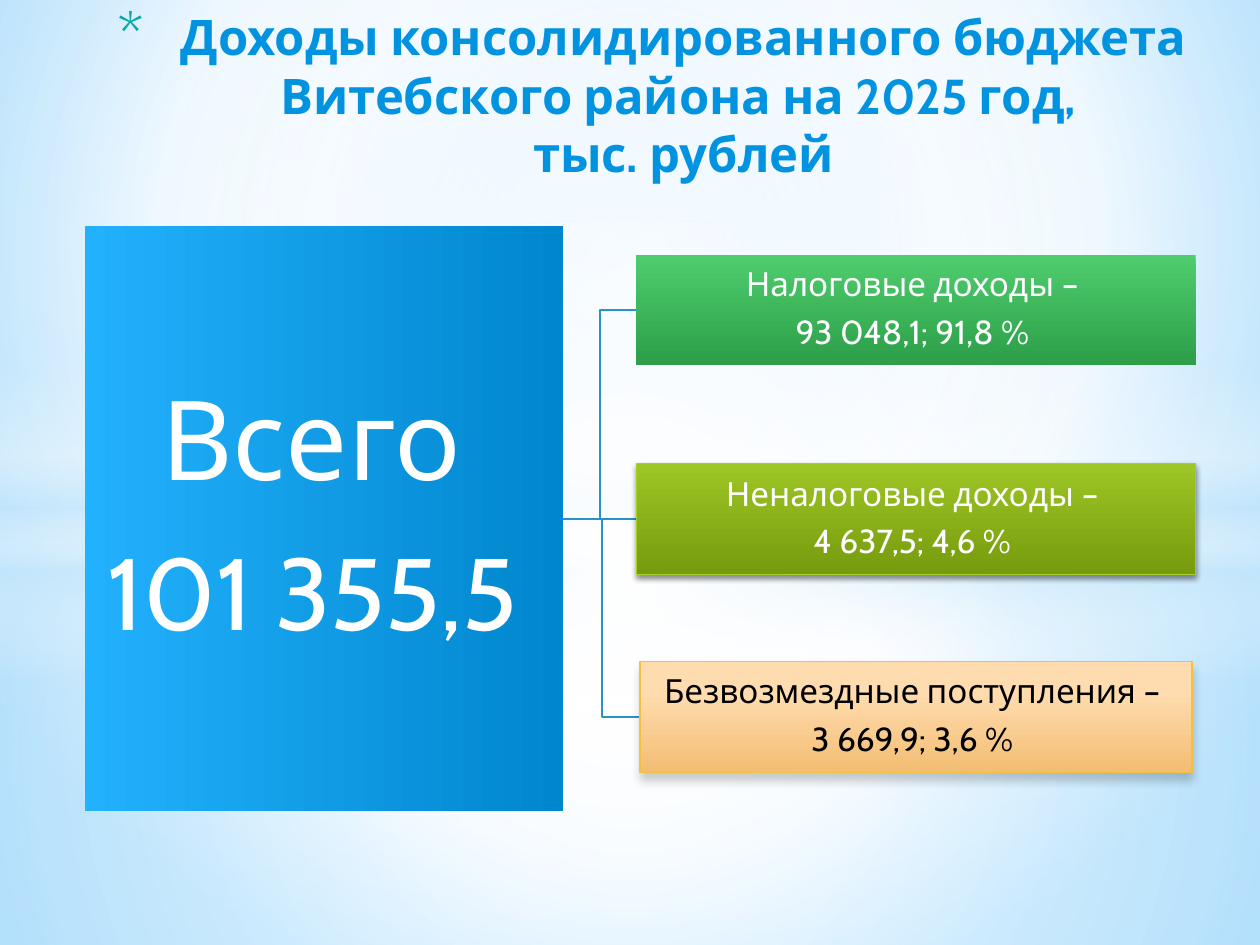
"""Build the slide on the consolidated budget revenues of the district."""
from dataclasses import dataclass
from typing import Any, Optional

from lxml.etree import SubElement
from pptx import Presentation
from pptx.dml.color import RGBColor
from pptx.enum.shapes import MSO_CONNECTOR as Connector, MSO_SHAPE as Preset
from pptx.enum.text import MSO_ANCHOR as Anchor, MSO_AUTO_SIZE as AutoSize, PP_ALIGN as Align
from pptx.oxml.ns import qn
from pptx.util import Inches, Pt

FONT = "Cabin"
LINE_COLOR = "2792CB"
TRUNK_X, TRUNK_Y = 4.47, 4.12
CIRCLE_CENTER = (50, 50, 50, 50)


@dataclass
class Gradient:
    stops: list[tuple]
    angle: int = 90
    focus: Optional[tuple[int, int, int, int]] = None


@dataclass
class Shadow:
    alpha: int
    blur: float
    distance: float


@dataclass
class Backdrop:
    box: tuple[float, float, float, float]
    gradient: Gradient
    preset: Any = Preset.RECTANGLE


@dataclass
class Card:
    box: tuple[float, float, float, float]
    lines: list[str]
    sizes: list[int]
    gradient: Gradient
    text_color: str = "FFFFFF"
    line_color: Optional[str] = None
    shadow: Optional[Shadow] = None
    inset: float = 0.01
    rotation: int = 0


BACKGROUND = Gradient([(0, "B0E0FF"), (60, "FFFFFF"), (100, "6BC5FF")], focus=(20, 10, 20, 60))
BACKDROPS = [
    Backdrop((0, 4.23, 10, 3.27), Gradient(
        [(0, "FFFFFF", 91), (37, "FFFFFF", 76), (100, "C6E7FC", 79)], focus=CIRCLE_CENTER)),
    Backdrop((0, 0, 10, 4.23), Gradient(
        [(0, "FFFFFF", 89), (48, "FFFFFF", 62), (100, "C6E7FC", 79)], focus=CIRCLE_CENTER)),
    Backdrop((0, 2.9, 10, 2.5), Gradient(
        [(0, "FFFFFF", 0), (29, "FFFFFF", 30), (45, "C6E7FC", 40),
         (55, "FFFFFF", 26), (65, "C6E7FC", 60), (100, "FFFFFF", 0)])),
    Backdrop((0, 1.75, 10, 5.58), Gradient(
        [(0, "FFFFFF"), (54, "FFFFFF", 0)], focus=CIRCLE_CENTER), Preset.OVAL),
]
TOTAL = Card((0.25, 2.22, 4.64, 3.79), ["Всего ", "101 355,5 "], [63, 58],
             Gradient([(0, "22B1FD"), (100, "0086CD")]), inset=0.04, rotation=270)
SOURCES = [
    Card((5.05, 2.02, 4.44, 0.88), ["Налоговые доходы – ", "93 048,1; 91,8 % "], [19, 19],
         Gradient([(0, "4FCD6E"), (100, "2C9F48")])),
    Card((5.05, 3.68, 4.44, 0.88), ["Неналоговые доходы – ", "4 637,5; 4,6 % "], [19, 19],
         Gradient([(0, "9DC626"), (100, "779B0D")]),
         line_color="A5D028", shadow=Shadow(45, 3.1, 1.8)),
    Card((5.08, 5.25, 4.38, 0.88), ["Безвозмездные поступления – ", "3 669,9; 3,6 % "], [19, 19],
         Gradient([(28, "FFDCAF"), (100, "F3BD72")]), text_color="000000",
         line_color="F5C040", shadow=Shadow(20, 5, 4)),
]


def rgb(value: str) -> RGBColor:
    """Turn a hex string into a colour."""
    return RGBColor.from_string(value)


def apply(target: Any, formats: dict[str, Any]) -> None:
    """Set every listed attribute on the target."""
    for name, value in formats.items():
        setattr(target, name, value)


def add_node(parent: Any, tag: str, **attributes: Any) -> Any:
    """Append a drawing element with the given attributes."""
    return SubElement(parent, qn(f"a:{tag}"), {name: str(value) for name, value in attributes.items()})


def add_color(parent: Any, color: str, alpha: int = 100) -> None:
    """Append a colour with its opacity in percent."""
    node = add_node(parent, "srgbClr", val=color)
    if alpha < 100:
        add_node(node, "alpha", val=alpha * 1000)


def paint_gradient(fill: Any, element: Any, gradient: Gradient) -> None:
    """Fill an element with a linear or circular gradient."""
    fill.gradient()
    node = element.find(f".//{qn('a:gradFill')}")
    for child in list(node):
        node.remove(child)
    stop_list = add_node(node, "gsLst")
    for position, *color in gradient.stops:
        add_color(add_node(stop_list, "gs", pos=position * 1000), *color)
    if gradient.focus:
        sides = {side: value * 1000 for side, value in zip("ltrb", gradient.focus)}
        add_node(add_node(node, "path", path="circle"), "fillToRect", **sides)
    else:
        add_node(node, "lin", ang=gradient.angle * 60000, scaled=0)


def add_panel(slide: Any, preset: Any, box: tuple, gradient: Gradient) -> Any:
    """Add a gradient shape without outline or shadow."""
    shape = slide.shapes.add_shape(preset, *map(Inches, box))
    shape.shadow.inherit = False
    shape.line.fill.background()
    paint_gradient(shape.fill, shape._element, gradient)
    return shape


def add_card(slide: Any, card: Card) -> None:
    """Add a box with centred lines of text."""
    shape = add_panel(slide, Preset.RECTANGLE, card.box, card.gradient)
    shape.rotation = card.rotation
    if card.line_color:
        shape.line.color.rgb = rgb(card.line_color)
        shape.line.width = Pt(0.75)
    if card.shadow:
        effects = shape._element.spPr.find(qn("a:effectLst"))
        outer = add_node(effects, "outerShdw", blurRad=Pt(card.shadow.blur),
                         dist=Pt(card.shadow.distance), dir=5400000, rotWithShape=0)
        add_color(outer, "000000", card.shadow.alpha)
    frame = shape.text_frame
    apply(frame, {f"margin_{side}": Inches(card.inset) for side in ("left", "top", "right", "bottom")})
    apply(frame, {"word_wrap": True, "vertical_anchor": Anchor.MIDDLE, "text": "\n".join(card.lines)})
    if card.rotation:
        frame._txBody.bodyPr.set("vert", "vert")
    for paragraph, size in zip(frame.paragraphs, card.sizes):
        apply(paragraph, {"alignment": Align.CENTER, "line_spacing": 0.9})
        add_node(add_node(paragraph._p.get_or_add_pPr(), "spcAft"), "spcPct", val=35000)
        font = paragraph.runs[0].font
        apply(font, {"name": FONT, "size": Pt(size)})
        font.color.rgb = rgb(card.text_color)


def add_branch(slide: Any, card: Card) -> None:
    """Connect the total to the middle of a card's left side."""
    left, top, _, height = card.box
    middle = round(top + height / 2, 2)
    kind = Connector.STRAIGHT if middle == TRUNK_Y else Connector.ELBOW
    connector = slide.shapes.add_connector(kind, *map(Inches, (TRUNK_X, TRUNK_Y, left, middle)))
    connector.line.color.rgb = rgb(LINE_COLOR)
    connector.line.width = Pt(1.25)
    add_node(connector._element.spPr, "effectLst")


def set_title(title: Any, text: str) -> None:
    """Place and format the bulleted title."""
    apply(title, dict(zip(("left", "top", "width", "height"), map(Inches, (0.51, 0, 9.13, 1.96)))))
    frame = title.text_frame
    apply(frame, {"text": text, "word_wrap": True, "auto_size": AutoSize.NONE,
                  "vertical_anchor": Anchor.TOP})
    paragraph = frame.paragraphs[0]
    paragraph.alignment = Align.CENTER
    properties = paragraph._p.get_or_add_pPr()
    properties.set("marL", str(Inches(0.7)))
    properties.set("indent", str(Inches(-0.5)))
    add_color(add_node(properties, "buClr"), "04A8A4")
    add_node(properties, "buSzPct", val=128000)
    add_node(properties, "buFont", typeface=FONT)
    add_node(properties, "buChar", char="*")
    for run in paragraph.runs:
        apply(run.font, {"name": FONT, "size": Pt(28), "bold": True})
        run.font.color.rgb = rgb("0293E0")


def main() -> None:
    """Build and save the presentation."""
    presentation = Presentation()
    apply(presentation, {"slide_width": Inches(10), "slide_height": Inches(7.5)})
    slide = presentation.slides.add_slide(presentation.slide_layouts[0])
    subtitle = slide.placeholders[1]._element
    subtitle.getparent().remove(subtitle)
    paint_gradient(slide.background.fill, slide._element, BACKGROUND)
    for backdrop in BACKDROPS:
        add_panel(slide, backdrop.preset, backdrop.box, backdrop.gradient)
    title = slide.shapes.title
    slide.shapes._spTree.append(title._element)
    set_title(title, "Доходы консолидированного бюджета Витебского района на 2025 год, \vтыс. рублей")
    for card in reversed(SOURCES):
        add_branch(slide, card)
    for card in [TOTAL, *SOURCES]:
        add_card(slide, card)
    presentation.save("out.pptx")


if __name__ == "__main__":
    main()
